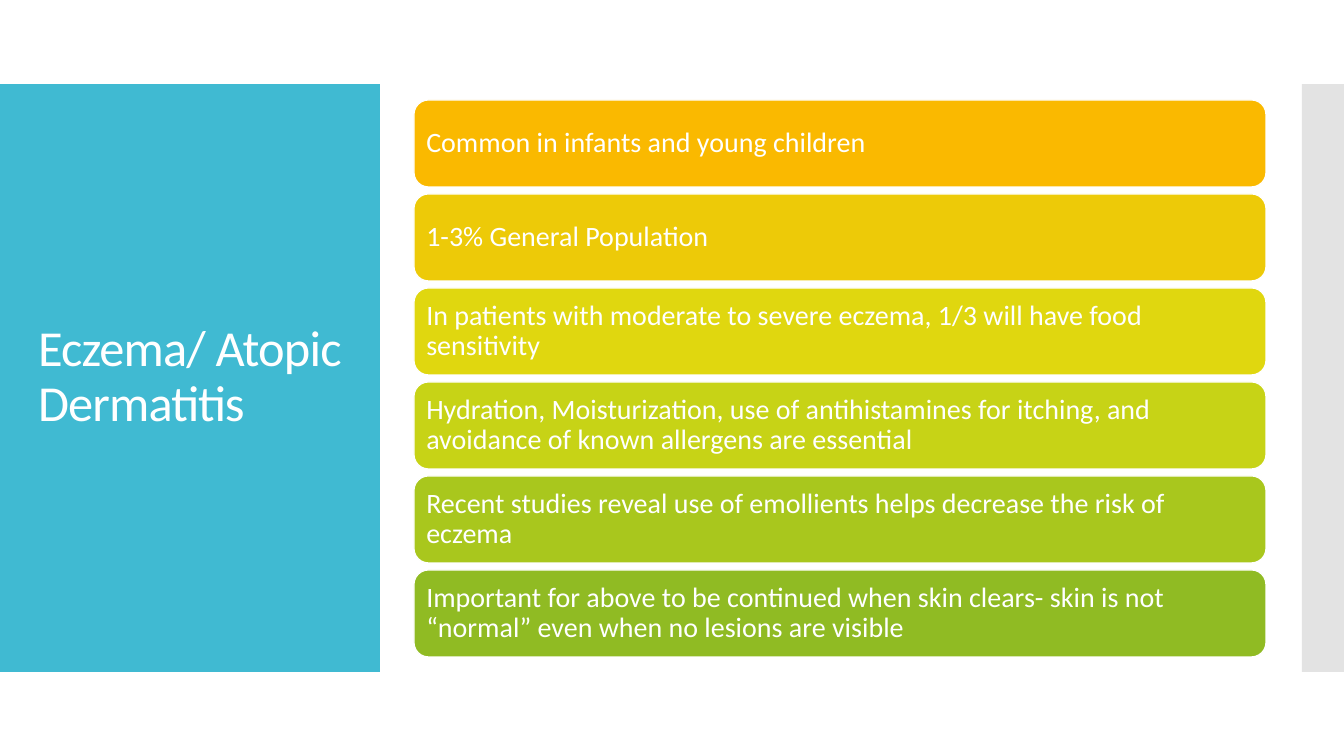
import pptx
import pptx.util
import pptx.dml.color
import pptx.enum.shapes
import pptx.enum.text
import pptx.oxml.ns
from lxml import etree

RGBColor = pptx.dml.color.RGBColor
SHAPE = pptx.enum.shapes.MSO_SHAPE
ALIGN = pptx.enum.text.PP_ALIGN
ANCHOR = pptx.enum.text.MSO_ANCHOR

SCALE = 914400 / 100.8  # EMU in one px
FONT = "Calibri"
WHITE = RGBColor(0xFF, 0xFF, 0xFF)
TEAL = RGBColor(0x40, 0xBA, 0xD2)
GRAY = RGBColor(0xC8, 0xC8, 0xC8)
AMBER = RGBColor(0xFA, 0xB9, 0x00)
GOLD = RGBColor(0xED, 0xCA, 0x08)
YELLOW = RGBColor(0xE0, 0xD7, 0x0F)
LIME = RGBColor(0xC7, 0xD3, 0x16)
LEAF = RGBColor(0xA9, 0xC7, 0x1D)
GREEN = RGBColor(0x90, 0xBB, 0x23)

FACTS = [
    (AMBER, "Common in infants and young children"),
    (GOLD, "1-3% General Population"),
    (YELLOW, "In patients with moderate to severe eczema, 1/3 will have food sensitivity"),
    (LIME, "Hydration, Moisturization, use of antihistamines for itching, "
           "and avoidance of known allergens are essential"),
    (LEAF, "Recent studies reveal use of emollients helps decrease the risk of eczema"),
    (GREEN, "Important for above to be continued when skin clears- skin is not "
            "“normal” even when no lesions are visible"),
]


def px(n):
    return pptx.util.Emu(round(n * SCALE))


def write(shape, text, size, inset, color=WHITE, track=None):
    """Put one left-aligned, vertically centred paragraph in a shape."""
    frame = shape.text_frame
    frame.word_wrap = True
    frame.vertical_anchor = ANCHOR.MIDDLE
    frame.margin_left = frame.margin_right = px(inset)
    frame.margin_top = frame.margin_bottom = px(inset)
    para = frame.paragraphs[0]
    para.alignment = ALIGN.LEFT
    para.line_spacing = 0.9
    run = para.add_run()
    run.text = text
    run.font.name = FONT
    run.font.size = pptx.util.Pt(size)
    run.font.color.rgb = color
    if track is not None:
        run._r.get_or_add_rPr().set("spc", str(track))


def block(slide, kind, left, top, width, height, fill, line=None, alpha=None):
    """Draw a filled shape, with an outline or transparency if asked."""
    shape = slide.shapes.add_shape(kind, px(left), px(top), px(width), px(height))
    shape.shadow.inherit = False
    shape.fill.solid()
    shape.fill.fore_color.rgb = fill
    if alpha is not None:
        color = shape.element.find(".//" + pptx.oxml.ns.qn("a:srgbClr"))
        etree.SubElement(color, pptx.oxml.ns.qn("a:alpha"), val=str(alpha * 1000))
    if line is None:
        shape.line.fill.background()
    else:
        shape.line.color.rgb = line
        shape.line.width = pptx.util.Pt(0.85)
    return shape


def main():
    deck = pptx.Presentation()
    deck.slide_width, deck.slide_height = px(1344), px(756)
    slide = deck.slides.add_slide(deck.slide_layouts[6])

    # Side panels
    block(slide, SHAPE.RECTANGLE, 0, 84, 380, 588, TEAL)
    block(slide, SHAPE.RECTANGLE, 1302, 84, 42, 588, GRAY, alpha=50)

    # Title
    title = slide.shapes.add_textbox(px(28), px(124), px(325), px(507))
    write(title, "Eczema/ Atopic Dermatitis", size=36, inset=10, track=-60)

    # Stack of facts
    for row, (fill, text) in enumerate(FACTS):
        bar = block(slide, SHAPE.ROUNDED_RECTANGLE, 414, 100 + 94 * row, 852, 87,
                    fill, line=WHITE)
        write(bar, text, size=20, inset=8)

    deck.save("out.pptx")


if __name__ == "__main__":
    main()
